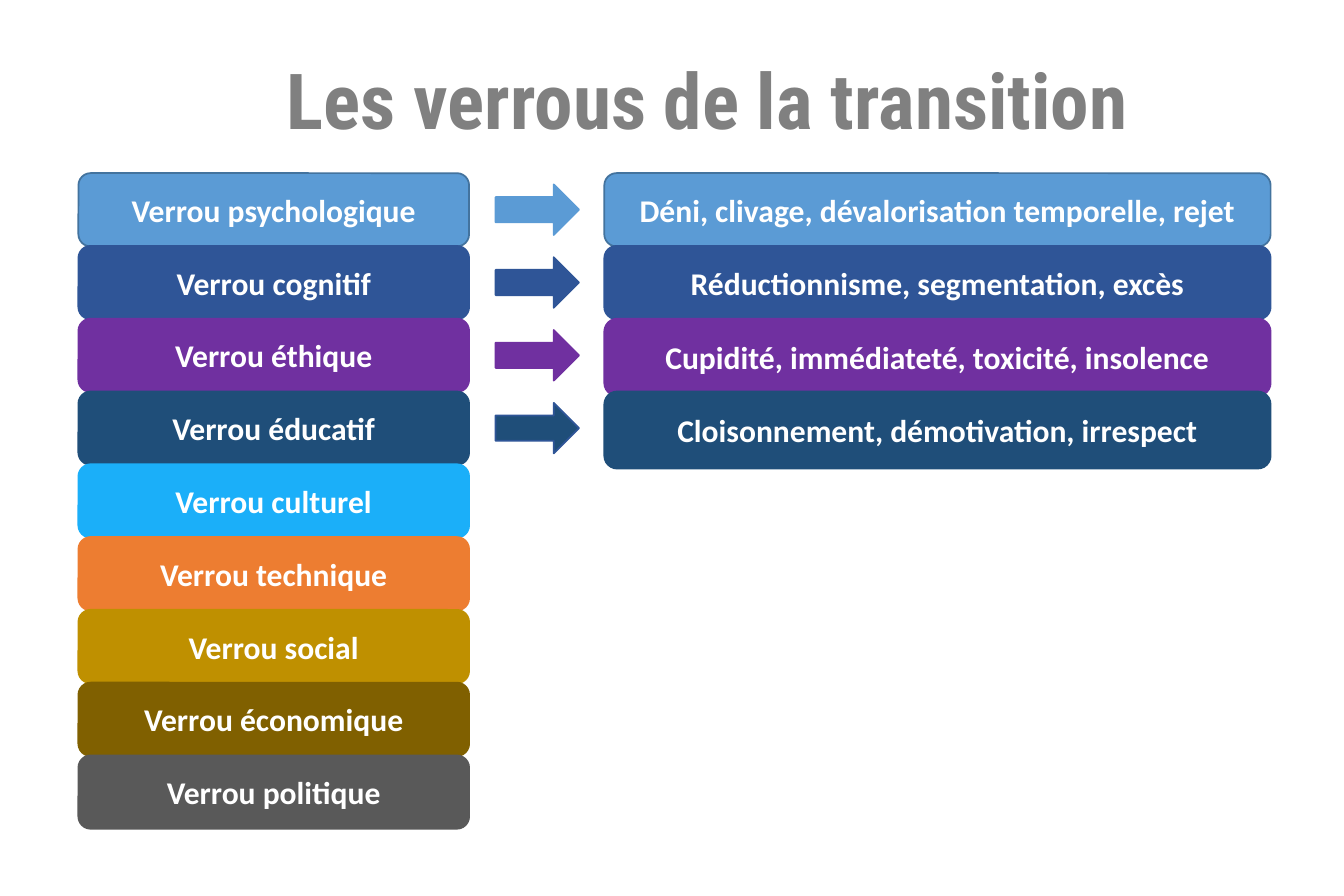
from dataclasses import dataclass

from pptx import Presentation
from pptx.dml.color import RGBColor as RGB
from pptx.enum.shapes import MSO_SHAPE as SHAPE
from pptx.enum.text import MSO_ANCHOR as ANCHOR, PP_ALIGN as ALIGN
from pptx.util import Inches, Pt

WIDTH, HEIGHT = 10.63, 7.09

# Grid: three columns (left, width) and evenly spaced rows
LOCK_COL = (0.62, 3.09)
ARROW_COL = (3.92, 0.66)
EFFECT_COL = (4.78, 5.27)
TOP, PITCH, ROW_H, TALL_H, ARROW_H = 1.37, 0.576, 0.58, 0.61, 0.4

COLORS = {
    "title": "808080", "text": "FFFFFF", "edge": "43739E",
    "sky": "5B9BD5", "blue": "2F5597", "purple": "7030A0",
    "navy": "1F4E79", "cyan": "1BAFF9", "orange": "ED7D31",
    "gold": "BF9000", "brown": "806000", "grey": "595959",
}


@dataclass
class Lock:
    name: str
    color: str
    effect: str = ""
    edge: str = ""
    arrow_edge: str = ""
    effect_h: float = ROW_H


LOCKS = [
    Lock("psychologique", "sky", "Déni, clivage, dévalorisation temporelle, rejet", edge="edge"),
    Lock("cognitif", "blue", "Réductionnisme, segmentation, excès"),
    Lock("éthique", "purple", "Cupidité, immédiateté, toxicité, insolence", effect_h=TALL_H),
    Lock("éducatif", "navy", "Cloisonnement, démotivation, irrespect",
         arrow_edge="blue", effect_h=TALL_H),
    Lock("culturel", "cyan"),
    Lock("technique", "orange"),
    Lock("social", "gold"),
    Lock("économique", "brown"),
    Lock("politique", "grey"),
]


def rgb(name: str) -> RGB:
    return RGB.from_string(COLORS[name])


def write(sp, text: str, *, size: int = 18, font: str = "Calibri",
          color: str = "text", align=ALIGN.CENTER) -> None:
    tf = sp.text_frame
    tf.word_wrap = True
    tf.vertical_anchor = ANCHOR.MIDDLE
    p = tf.paragraphs[0]
    p.alignment = align
    r = p.add_run()
    r.text = text
    r.font.size, r.font.name, r.font.bold = Pt(size), font, True
    r.font.color.rgb = rgb(color)


def add_block(s, kind, col: tuple[float, float], top: float, height: float,
              fill: str, edge: str):
    left, width = col
    sp = s.shapes.add_shape(kind, Inches(left), Inches(top), Inches(width), Inches(height))
    sp.shadow.inherit = False
    sp.fill.solid()
    sp.fill.fore_color.rgb = rgb(fill)
    sp.line.color.rgb = rgb(edge)
    sp.line.width = Pt(1)
    return sp


def add_row(s, row: int, lock: Lock) -> None:
    top = TOP + row * PITCH
    edge = lock.edge or lock.color
    sp = add_block(s, SHAPE.ROUNDED_RECTANGLE, LOCK_COL, top, ROW_H, lock.color, edge)
    write(sp, f"Verrou {lock.name}")
    if lock.effect:
        add_block(s, SHAPE.RIGHT_ARROW, ARROW_COL, top + (ROW_H - ARROW_H) / 2, ARROW_H,
                  lock.color, lock.arrow_edge or lock.color)
        sp = add_block(s, SHAPE.ROUNDED_RECTANGLE, EFFECT_COL, top, lock.effect_h,
                       lock.color, edge)
        write(sp, lock.effect)


def main() -> None:
    prs = Presentation()
    prs.slide_width, prs.slide_height = Inches(WIDTH), Inches(HEIGHT)
    s = prs.slides.add_slide(prs.slide_layouts[6])

    # Title
    title = s.shapes.add_textbox(Inches(2.17), Inches(0.19), Inches(8.46), Inches(1.18))
    write(title, "Les verrous de la transition", size=44, font="Roboto Condensed",
          color="title", align=ALIGN.LEFT)

    # Locks and their effects
    for row, lock in enumerate(LOCKS):
        add_row(s, row, lock)

    prs.save("out.pptx")


if __name__ == "__main__":
    main()
